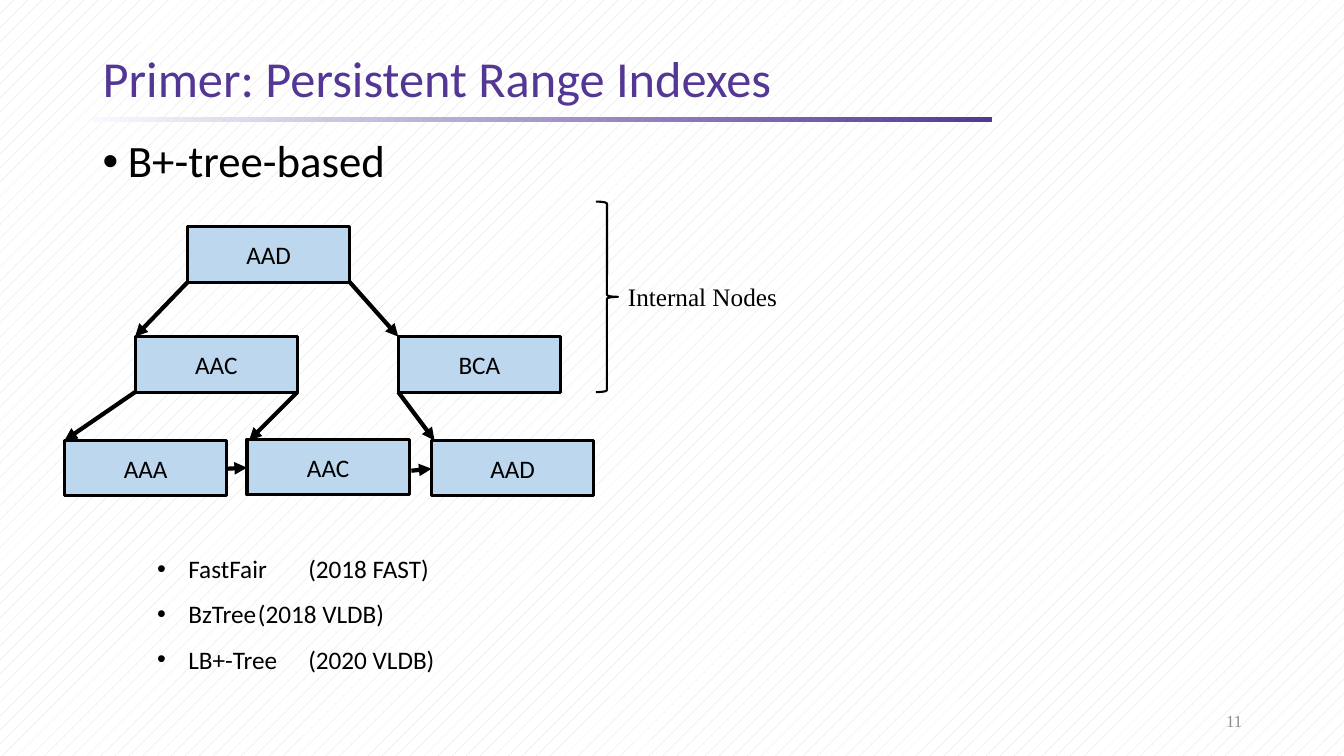
"""Build the slide on B+-tree-based persistent range indexes."""
from dataclasses import dataclass

import lxml.etree
import pptx
import pptx.dml.color
import pptx.enum.dml
import pptx.enum.shapes
import pptx.enum.text
import pptx.oxml.ns
import pptx.util

RGBColor = pptx.dml.color.RGBColor
Inches = pptx.util.Inches
Pt = pptx.util.Pt
qn = pptx.oxml.ns.qn
SHAPE = pptx.enum.shapes.MSO_SHAPE
ALIGN = pptx.enum.text.PP_ALIGN
ANCHOR = pptx.enum.text.MSO_ANCHOR

BLACK = RGBColor(0x00, 0x00, 0x00)
WHITE = RGBColor(0xFF, 0xFF, 0xFF)
PURPLE = RGBColor(0x54, 0x37, 0x95)
PALE = RGBColor(0xF7, 0xFA, 0xFD)
BLUE = RGBColor(0xBD, 0xD7, 0xEE)
GREY = RGBColor(0x8C, 0x8C, 0x8C)
HATCH = RGBColor(0xD9, 0xD9, 0xD9)
SERIF = "Times New Roman"
NODE_W, NODE_H = 1.61, 0.55


@dataclass(frozen=True)
class Node:
    key: str
    x: float
    y: float


@dataclass(frozen=True)
class Arrow:
    x1: float
    y1: float
    x2: float
    y2: float


NODES = [
    Node("AAD", 1.86, 2.25),
    Node("AAC", 1.34, 3.34),
    Node("BCA", 3.95, 3.34),
    Node("AAA", 0.64, 4.37),
    Node("AAC", 2.45, 4.36),
    Node("AAD", 4.28, 4.37),
]
ARROWS = [
    Arrow(1.86, 2.8, 1.34, 3.34),
    Arrow(3.47, 2.8, 3.95, 3.34),
    Arrow(1.34, 3.89, 0.64, 4.37),
    Arrow(2.95, 3.89, 2.47, 4.37),
    Arrow(3.95, 3.89, 4.31, 4.37),
    Arrow(2.25, 4.65, 2.45, 4.64),
    Arrow(4.08, 4.67, 4.28, 4.65),
]
INDEXES = ["FastFair\t(2018 FAST)", "BzTree\t(2018 VLDB)", "LB+-Tree\t(2020 VLDB)"]


def write(tf, text, *, size=18, font="Calibri", color=BLACK, align=ALIGN.LEFT,
          anchor=ANCHOR.TOP, spacing=1.0, before=0, indent=None, hang=0.0, wrap=True) -> None:
    tf.word_wrap = wrap
    tf.vertical_anchor = anchor
    for i, line in enumerate(text.split("\n")):
        p = tf.paragraphs[0] if i == 0 else tf.add_paragraph()
        p.alignment, p.line_spacing, p.space_before = align, spacing, Pt(before)
        r = p.add_run()
        r.text = line
        r.font.size, r.font.name, r.font.color.rgb = Pt(size), font, color
        if indent is not None:
            pPr = p._p.get_or_add_pPr()
            pPr.set("marL", str(Inches(indent)))
            pPr.set("indent", str(Inches(-hang)))
            lxml.etree.SubElement(pPr, qn("a:buFont")).set("typeface", "Arial")
            lxml.etree.SubElement(pPr, qn("a:buChar")).set("char", "•")


def add_text(s, x: float, y: float, w: float, h: float, text: str, **fmt) -> None:
    tb = s.shapes.add_textbox(Inches(x), Inches(y), Inches(w), Inches(h))
    write(tb.text_frame, text, **fmt)


def add_shape(s, kind, x: float, y: float, w: float, h: float):
    sp = s.shapes.add_shape(kind, Inches(x), Inches(y), Inches(w), Inches(h))
    sp.shadow.inherit = False
    return sp


def set_outline(sp, width: float) -> None:
    sp.line.color.rgb = BLACK
    sp.line.width = Pt(width)


def add_node(s, node: Node) -> None:
    sp = add_shape(s, SHAPE.RECTANGLE, node.x, node.y, NODE_W, NODE_H)
    sp.fill.solid()
    sp.fill.fore_color.rgb = BLUE
    set_outline(sp, 2.25)
    write(sp.text_frame, node.key, align=ALIGN.CENTER, anchor=ANCHOR.MIDDLE)


def add_arrow(s, a: Arrow) -> None:
    c = s.shapes.add_connector(pptx.enum.shapes.MSO_CONNECTOR.STRAIGHT,
                               Inches(a.x1), Inches(a.y1), Inches(a.x2), Inches(a.y2))
    set_outline(c, 3)
    lxml.etree.SubElement(c.line._get_or_add_ln(), qn("a:tailEnd")).set("type", "triangle")
    lxml.etree.SubElement(c._element.spPr, qn("a:effectLst"))


def add_title_rule(s) -> None:
    sp = add_shape(s, SHAPE.RECTANGLE, 0.92, 1.16, 8.92, 0.05)
    sp.line.fill.background()
    sp.fill.gradient()
    sp.fill.gradient_angle = 0
    for stop, color in zip(sp.fill.gradient_stops, (PALE, PURPLE)):
        stop.color.rgb = color


def add_brace(s) -> None:
    sp = add_shape(s, SHAPE.RIGHT_BRACE, 5.91, 2, 0.22, 1.89)
    sp.fill.background()
    set_outline(sp, 1.5)


def main() -> None:
    prs = pptx.Presentation()
    prs.slide_width, prs.slide_height = Inches(13.33), Inches(7.5)
    s = prs.slides.add_slide(prs.slide_layouts[6])
    bg = s.background.fill
    bg.patterned()
    bg.pattern = pptx.enum.dml.MSO_PATTERN.PERCENT_5
    bg.fore_color.rgb, bg.back_color.rgb = HATCH, WHITE

    add_title_rule(s)
    add_text(s, 9.42, 6.95, 3, 0.4, "11", size=12, font=SERIF, color=GREY,
             align=ALIGN.RIGHT, anchor=ANCHOR.MIDDLE)
    add_text(s, 0.92, 0.43, 11.5, 0.75, "Primer: Persistent Range Indexes", size=36,
             color=PURPLE, anchor=ANCHOR.MIDDLE, spacing=0.9)
    add_text(s, 0.92, 1.33, 5.19, 0.93, "B+-tree-based", size=32, spacing=0.9,
             before=10, indent=0.25, hang=0.25)
    for node in NODES:
        add_node(s, node)
    for arrow in ARROWS:
        add_arrow(s, arrow)
    add_text(s, 0.96, 5.31, 4.68, 1.41, "\n".join(INDEXES), anchor=ANCHOR.MIDDLE,
             spacing=1.5, indent=0.81, hang=0.31)
    add_brace(s)
    add_text(s, 6.13, 2.74, 1.74, 0.4, "Internal Nodes", font=SERIF, wrap=False)
    prs.save("out.pptx")


if __name__ == "__main__":
    main()
